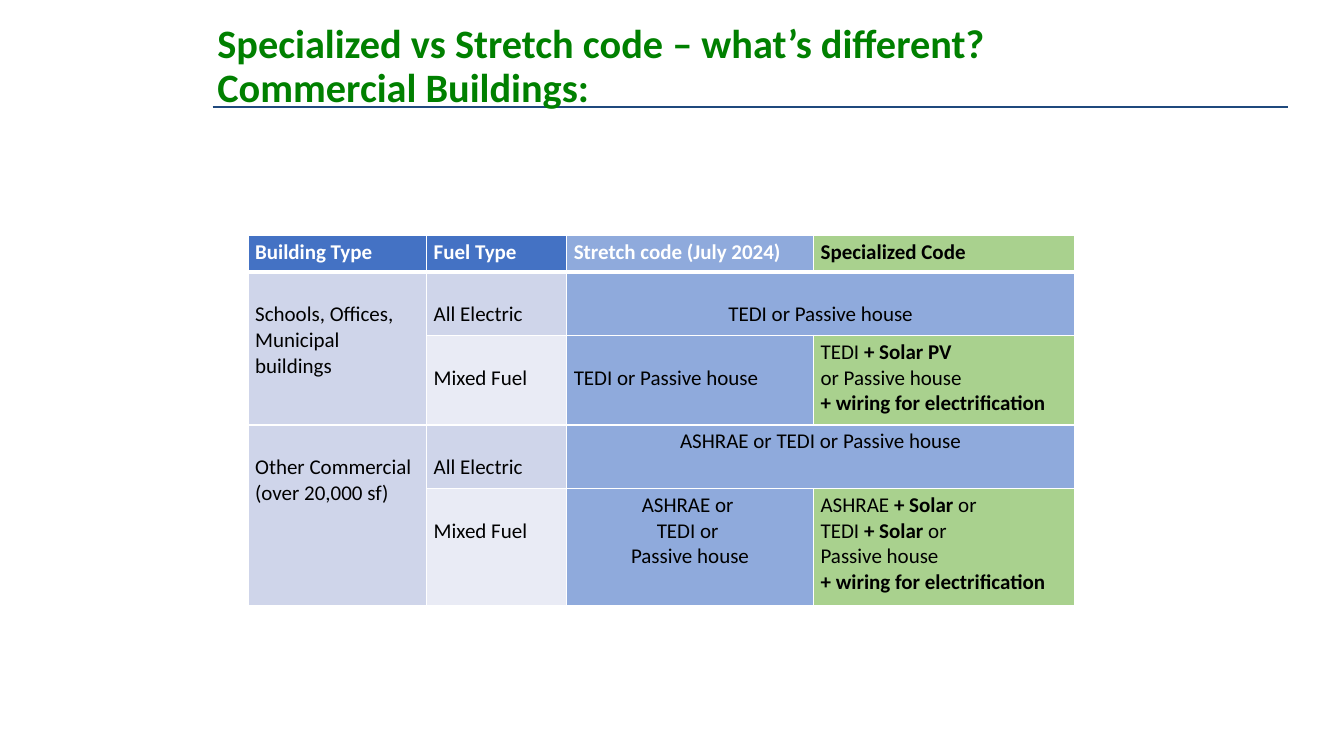
"""Build the slide comparing Specialized and Stretch code for commercial buildings."""
from lxml.etree import SubElement
from pptx import Presentation
from pptx.dml.color import RGBColor
from pptx.enum.shapes import MSO_CONNECTOR as Connector
from pptx.enum.text import MSO_ANCHOR as Anchor, PP_ALIGN as Align
from pptx.oxml import parse_xml
from pptx.oxml.ns import nsdecls, qn
from pptx.util import Cm, Pt

BLACK, WHITE, GREEN, NAVY = "000000", "FFFFFF", "008000", "1F497D"
HEADER, STRETCH, SPECIAL = "4472C4", "8FAADC", "A9D18E"
BAND, PALE = "CFD5EA", "E9EBF5"
PADDING, TEXT_LINE = 0.1, 0.65


def color(hex_code):
    return RGBColor.from_string(hex_code)


class CodeSlide:
    font_name = "Calibri"
    title_size = 28.8
    table_size = 15

    def __init__(self, slide):
        self.slide = slide

    def add_text(self, paragraph, text, size, ink, bold):
        run = paragraph.add_run()
        run.text = text
        run.font.name = self.font_name
        run.font.size = Pt(size)
        run.font.bold = bold
        run.font.color.rgb = color(ink)

    def rule(self, left, right, y):
        underline = self.slide.shapes.add_connector(
            Connector.STRAIGHT, Cm(left), Cm(y), Cm(right), Cm(y))
        underline.line.color.rgb = color(NAVY)
        underline.line.width = Pt(1.5)
        SubElement(underline._element.spPr, qn("a:effectLst"))

    def title(self, lines, left, top, width, height):
        frame = self.slide.shapes.add_textbox(
            Cm(left), Cm(top), Cm(width), Cm(height)).text_frame
        frame.word_wrap = True
        frame.vertical_anchor = Anchor.MIDDLE
        heading = frame.paragraphs[0]
        heading.line_spacing = 0.9
        for index, line in enumerate(lines):
            if index:
                heading.add_line_break()
            self.add_text(heading, line, self.title_size, GREEN, True)

    def table(self, left, top, widths, heights):
        grid = self.slide.shapes.add_table(
            len(heights), len(widths), Cm(left), Cm(top),
            Cm(sum(widths)), Cm(sum(heights))).table
        for column, width in zip(grid.columns, widths):
            column.width = Cm(width)
        for row, height in zip(grid.rows, heights):
            row.height = Cm(height)
        return grid

    def cell(self, cell, fill, paragraphs, lowered=False, centered=False,
             ink=BLACK, bold=False, top_edge=1, bottom_edge=1):
        cell.fill.solid()
        cell.fill.fore_color.rgb = color(fill)
        cell.margin_left = cell.margin_right = Cm(0.18)
        cell.margin_top = Cm(PADDING + TEXT_LINE * lowered)
        cell.margin_bottom = Cm(PADDING)
        frame = cell.text_frame
        for index, runs in enumerate(paragraphs):
            paragraph = frame.add_paragraph() if index else frame.paragraphs[0]
            paragraph.alignment = Align.CENTER if centered else Align.LEFT
            for text in runs:
                self.add_text(paragraph, text, self.table_size, ink,
                              bold or text.startswith("+"))
        self.borders(cell, {"L": 1, "R": 1, "T": top_edge, "B": bottom_edge})

    def borders(self, cell, edges):
        properties = cell._tc.get_or_add_tcPr()
        for index, (side, points) in enumerate(edges.items()):
            properties.insert(index, parse_xml(
                f'<a:ln{side} {nsdecls("a")} w="{Pt(points)}"><a:solidFill>'
                f'<a:srgbClr val="{WHITE}"/></a:solidFill></a:ln{side}>'))


def main():
    deck = Presentation()
    deck.slide_width, deck.slide_height = Cm(33.87), Cm(19.05)
    page = CodeSlide(deck.slides.add_slide(deck.slide_layouts[6]))
    page.rule(5.36, 32.46, 2.69)
    page.title(["Specialized vs Stretch code – what’s different?",
                "Commercial Buildings:"], 5.23, 0.64, 26.95, 2.11)

    codes = page.table(6.25, 5.94, [4.5, 3.53, 6.22, 6.58],
                       [0.91, 1.6, 2.26, 1.6, 2.95])
    headings = [("Building Type", HEADER, WHITE), ("Fuel Type", HEADER, WHITE),
                ("Stretch code (July 2024)", STRETCH, WHITE),
                ("Specialized Code", SPECIAL, BLACK)]
    for column, (heading, fill, ink) in enumerate(headings):
        page.cell(codes.cell(0, column), fill, [[heading]],
                  ink=ink, bold=True, bottom_edge=3)

    wiring = ["+ wiring for electrification"]
    buildings = [
        ("Schools, Offices, Municipal buildings",
         ([["TEDI or Passive house"]], True, True),
         ([["TEDI or Passive house"]], True, False),
         [["TEDI ", "+ Solar PV"], ["or Passive house"], wiring]),
        ("Other Commercial (over 20,000 sf)",
         ([["ASHRAE or TEDI or Passive house"]], False, True),
         ([["ASHRAE or "], ["TEDI or "], ["Passive house"]], False, True),
         [["ASHRAE ", "+ Solar ", "or"], ["TEDI ", "+ Solar ", "or"],
          ["Passive house"], wiring]),
    ]
    for index, (building, electric, mixed, specialized) in enumerate(buildings):
        upper = 1 + 2 * index
        lower = upper + 1
        edge = 3 if upper == 1 else 1
        codes.cell(upper, 0).merge(codes.cell(lower, 0))
        codes.cell(upper, 2).merge(codes.cell(upper, 3))
        page.cell(codes.cell(upper, 0), BAND, [[building]], True, top_edge=edge)
        page.cell(codes.cell(upper, 1), BAND, [["All Electric"]], True, top_edge=edge)
        page.cell(codes.cell(upper, 2), STRETCH, *electric, top_edge=edge)
        page.cell(codes.cell(lower, 1), PALE, [["Mixed Fuel"]], True)
        page.cell(codes.cell(lower, 2), STRETCH, *mixed)
        page.cell(codes.cell(lower, 3), SPECIAL, specialized)
    deck.save("out.pptx")


if __name__ == "__main__":
    main()
